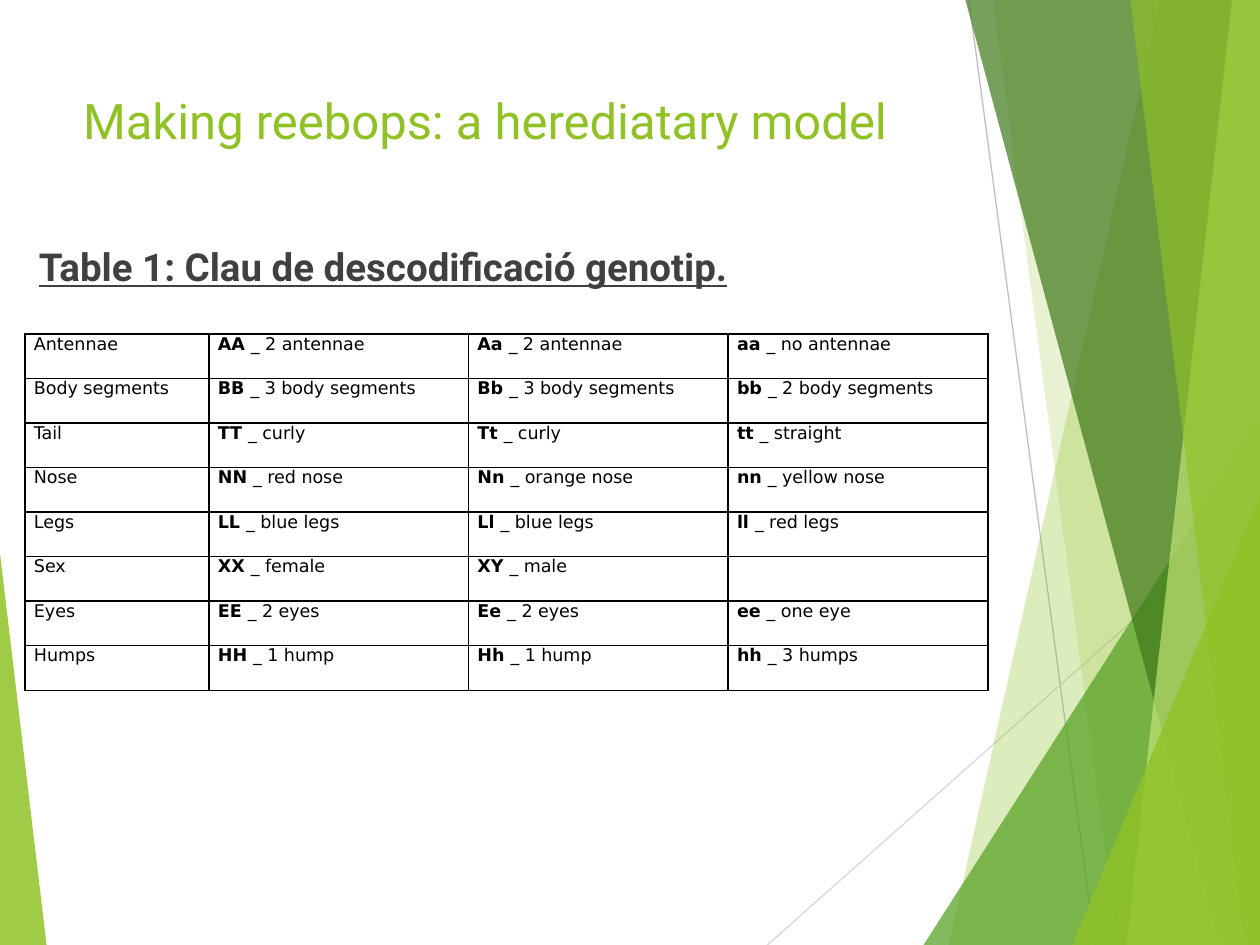
from lxml.etree import SubElement
from pptx import Presentation
from pptx.dml.color import RGBColor
from pptx.enum.shapes import MSO_CONNECTOR, MSO_SHAPE
from pptx.enum.text import MSO_ANCHOR, PP_ALIGN
from pptx.oxml import parse_xml
from pptx.oxml.ns import nsdecls, qn
from pptx.util import Inches, Pt

HUES = {
    "lime": "90C226", "green": "54A021", "forest": "3F7819", "pale": "C0E474",
    "gray": "BFBFBF", "mist": "D9D9D9", "ink": "404040", "black": "000000",
}
TOP, WIDE, HIGH = -0.01, 10, 7.5

TRAITS = [
    ("Antennae", "AA _ 2 antennae", "Aa _ 2 antennae", "aa _ no antennae"),
    ("Body segments", "BB _ 3 body segments", "Bb _ 3 body segments", "bb _ 2 body segments"),
    ("Tail", "TT _ curly", "Tt _ curly", "tt _ straight"),
    ("Nose", "NN _ red nose", "Nn _ orange nose", "nn _ yellow nose"),
    ("Legs", "LL _ blue legs", "Ll _ blue legs", "ll _ red legs"),
    ("Sex", "XX _ female", "XY _ male", ""),
    ("Eyes", "EE _ 2 eyes", "Ee _ 2 eyes", "ee _ one eye"),
    ("Humps", "HH _ 1 hump", "Hh _ 1 hump", "hh _ 3 humps"),
]


def hue(name):
    return RGBColor.from_string(HUES[name])


def paint(shape, name, alpha):
    shape.shadow.inherit = False
    shape.line.fill.background()
    shape.fill.solid()
    shape.fill.fore_color.rgb = hue(name)
    tint = shape.fill._xPr.find(qn("a:solidFill"))[0]
    SubElement(tint, qn("a:alpha"), val=str(alpha * 1000))


def add_line(slide, start, end, name):
    ends = [Inches(n) for n in start + end]
    line = slide.shapes.add_connector(MSO_CONNECTOR.STRAIGHT, *ends)
    line.line.color.rgb = hue(name)
    line.line.width = Pt(0.75)
    SubElement(line._element.spPr, qn("a:effectLst"))


def add_band(slide, top, base, name, alpha):
    spots = [(WIDE, TOP), (WIDE, HIGH), (base, HIGH)]
    pen = slide.shapes.build_freeform(Inches(top), Inches(TOP))
    pen.add_line_segments([(Inches(x), Inches(y)) for x, y in spots])
    paint(pen.convert_to_shape(), name, alpha)


def add_peak(slide, left, top, width, tip, name, alpha):
    box = [Inches(n) for n in (left, top, width, HIGH - top)]
    peak = slide.shapes.add_shape(MSO_SHAPE.ISOSCELES_TRIANGLE, *box)
    peak.adjustments[0] = tip
    paint(peak, name, alpha)


def add_run(para, text, font, size, name, bold=False):
    run = para.add_run()
    run.text = text
    run.font.name = font
    run.font.size = Pt(size)
    run.font.bold = bold
    run.font.color.rgb = hue(name)
    return run


def set_title(slide, text):
    title = slide.shapes.title
    title.left, title.top = Inches(0.56), Inches(0.67)
    title.width, title.height = Inches(7.05), Inches(1.44)
    title.text_frame.vertical_anchor = MSO_ANCHOR.TOP
    para = title.text_frame.paragraphs[0]
    para.alignment = PP_ALIGN.LEFT
    add_run(para, text, "Roboto", 28, "lime")


def add_label(slide, text):
    box = slide.shapes.add_textbox(Inches(0.21), Inches(1.88), Inches(7.39), Inches(0.47))
    frame = box.text_frame
    frame.word_wrap = True
    frame.vertical_anchor = MSO_ANCHOR.MIDDLE
    run = add_run(frame.paragraphs[0], text, "Roboto", 22, "ink", True)
    run.font.underline = True


def add_edges(cell):
    props = cell._tc.get_or_add_tcPr()
    for spot, side in enumerate("LRTB"):
        props.insert(spot, parse_xml(
            f'<a:ln{side} {nsdecls("a")} w="{Pt(1)}"><a:solidFill>'
            f'<a:srgbClr val="{HUES["black"]}"/></a:solidFill></a:ln{side}>'))


def fill_cell(cell, text):
    cell.margin_left = cell.margin_right = Inches(0.07)
    cell.margin_top = cell.margin_bottom = 0
    cell.fill.background()
    add_edges(cell)
    para = cell.text_frame.paragraphs[0]
    gene, mark, trait = text.partition("_")
    if mark:
        add_run(para, gene, "DejaVu Sans", 10, "black", True)
        add_run(para, mark + trait, "DejaVu Sans", 10, "black")
    elif text:
        add_run(para, text, "DejaVu Sans", 10, "black")


def add_grid(slide, rows):
    widths = [1.46] + [2.06] * 3
    high = Inches(2.83)
    frame = slide.shapes.add_table(
        len(rows), len(widths), Inches(0.2), Inches(2.65), Inches(sum(widths)), high)
    table = frame.table
    table.first_row = table.horz_banding = False
    for col, width in zip(table.columns, widths):
        col.width = Inches(width)
    for row, texts in zip(table.rows, rows):
        row.height = high // len(rows)
        for cell, text in zip(row.cells, texts):
            fill_cell(cell, text)


def add_decor(slide):
    add_line(slide, (7.69, 0), (8.69, HIGH), "gray")
    add_line(slide, (WIDE, 4.03), (6.09, HIGH), "mist")
    add_band(slide, 9.21, 7.53, "lime", 30)
    add_band(slide, 7.88, 8.87, "lime", 20)
    add_peak(slide, 7.33, 3.33, 2.67, 1, "green", 72)
    add_band(slide, 7.66, 9.68, "forest", 70)
    add_band(slide, 9.78, 8.94, "pale", 70)
    add_band(slide, 8.97, 9.88, "lime", 65)
    add_peak(slide, 8.51, 3.93, 1.49, 1, "lime", 80)
    add_peak(slide, 0, 4.39, 0.37, 0, "lime", 85)


def main():
    deck = Presentation()
    deck.slide_width, deck.slide_height = Inches(WIDE), Inches(HIGH)
    slide = deck.slides.add_slide(deck.slide_layouts[5])
    add_decor(slide)
    set_title(slide, "Making reebops: a herediatary model")
    add_grid(slide, TRAITS)
    add_label(slide, "Table 1: Clau de descodificació genotip.")
    deck.save("out.pptx")


if __name__ == "__main__":
    main()
